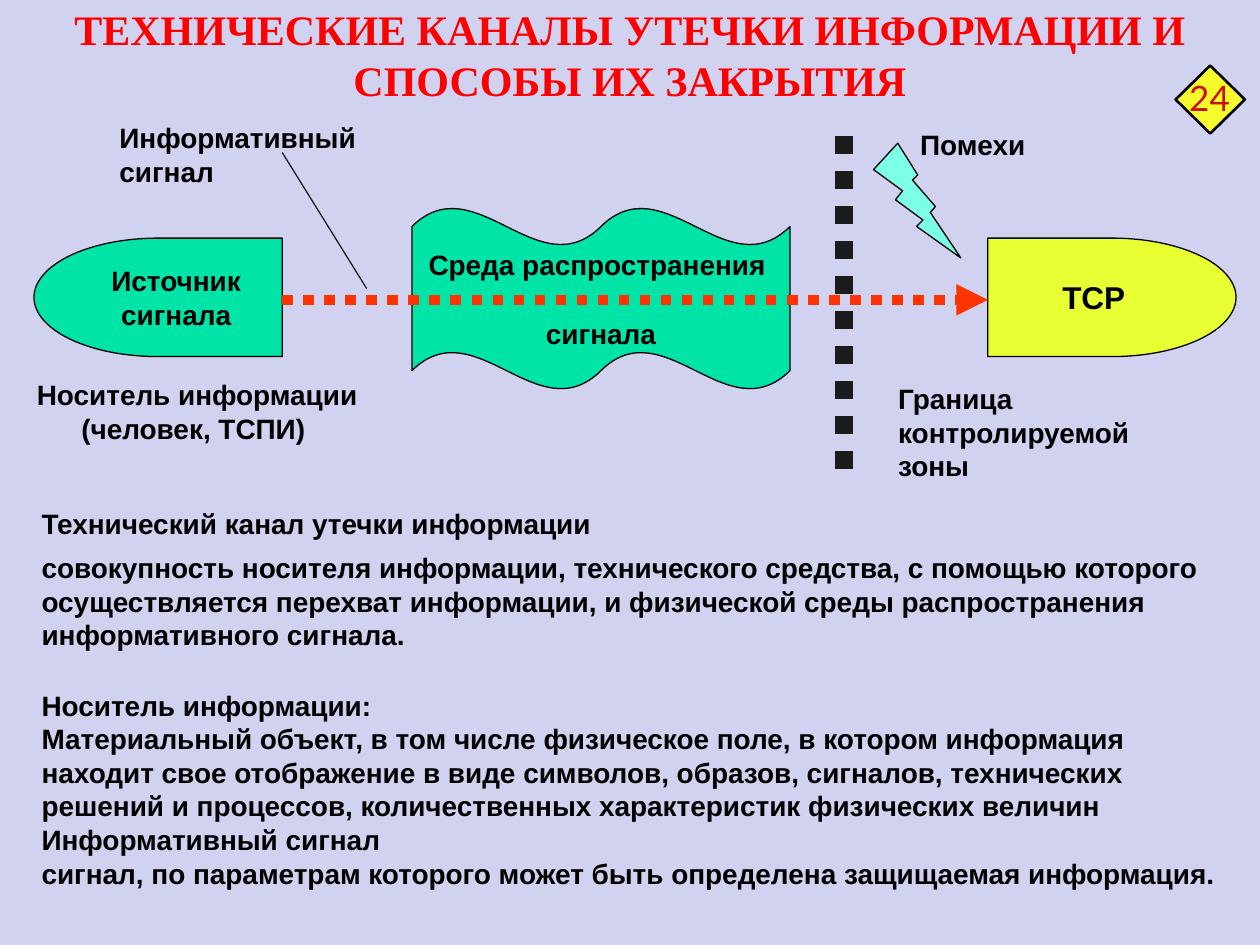
from pptx import Presentation
from pptx.dml.color import RGBColor
from pptx.enum.dml import MSO_LINE
from pptx.enum.shapes import MSO_CONNECTOR, MSO_SHAPE
from pptx.enum.text import MSO_ANCHOR, MSO_AUTO_SIZE, PP_ALIGN
from pptx.oxml.ns import qn
from pptx.util import Inches, Pt
from lxml.etree import SubElement

BLACK = RGBColor(0x00, 0x00, 0x00)
DARK = RGBColor(0x1C, 0x1C, 0x1C)
RED = RGBColor(0xFF, 0x00, 0x00)
ORANGE = RGBColor(0xFF, 0x33, 0x00)
CRIMSON = RGBColor(0xCA, 0x10, 0x02)
GREEN = RGBColor(0x00, 0xE4, 0xA8)
LIME = RGBColor(0xE7, 0xFF, 0x33)
AQUA = RGBColor(0x7D, 0xFF, 0xE6)
YELLOW = RGBColor(0xF6, 0xFB, 0x2D)
LILAC = RGBColor(0xD1, 0xD1, 0xF0)

TITLE = "ТЕХНИЧЕСКИЕ КАНАЛЫ УТЕЧКИ ИНФОРМАЦИИ И СПОСОБЫ ИХ ЗАКРЫТИЯ"
TERMS = [
    ("Технический канал утечки информации", 3, 3),
    ("совокупность носителя информации, технического средства, с помощью "
     "которого осуществляется перехват информации, и физической среды "
     "распространения информативного сигнала.", 3, 3),
    ("Носитель информации:", 18, 0),
    ("Материальный объект, в том числе физическое поле, в котором информация "
     "находит свое отображение в виде символов, образов, сигналов, технических "
     "решений и процессов, количественных характеристик физических величин", 0, 0),
    ("Информативный сигнал", 0, 0),
    ("сигнал, по параметрам которого может быть определена защищаемая "
     "информация.", 0, 0),
]


def place(item, box):
    item.left, item.top, item.width, item.height = map(Inches, box)


def style(para, size=16, color=BLACK, face="Arial", bold=True,
          align=PP_ALIGN.LEFT, before=0, after=0):
    font = para.font
    font.name, font.size, font.bold = face, Pt(size), bold
    font.color.rgb = color
    para.alignment = align
    para.space_before, para.space_after = Pt(before), Pt(after)


def label(slide, box, text, **look):
    frame = slide.shapes.add_textbox(*map(Inches, box)).text_frame
    frame.word_wrap = True
    frame.text = text
    style(frame.paragraphs[0], **look)


def shape(slide, kind, box, fill, lines=(), size=16, gap=0, width=0.75):
    item = slide.shapes.add_shape(kind, *map(Inches, box))
    item.shadow.inherit = False
    item.fill.solid()
    item.fill.fore_color.rgb = fill
    item.line.color.rgb = BLACK
    item.line.width = Pt(width)
    frame = item.text_frame
    frame.word_wrap = False
    frame.vertical_anchor = MSO_ANCHOR.MIDDLE
    frame.text = "\n".join(lines)
    for i, para in enumerate(frame.paragraphs):
        style(para, size, align=PP_ALIGN.CENTER, before=gap if i else 0)
    return item


def line(slide, start, end, color, width, dash=None, arrow=False):
    item = slide.shapes.add_connector(
        MSO_CONNECTOR.STRAIGHT, *map(Inches, (*start, *end)))
    item.line.color.rgb = color
    item.line.width = Pt(width)
    if dash:
        item.line.dash_style = dash
    if arrow:
        SubElement(item.line._get_or_add_ln(), qn("a:tailEnd"), type="triangle")
    SubElement(item._element.spPr, qn("a:effectLst"))


def title(slide, box):
    head = slide.shapes.title
    place(head, box)
    frame = head.text_frame
    frame.margin_left = frame.margin_right = 0
    frame.margin_top = frame.margin_bottom = 0
    frame.auto_size = MSO_AUTO_SIZE.NONE
    frame.vertical_anchor = MSO_ANCHOR.TOP
    frame.text = TITLE
    style(frame.paragraphs[0], 24, RED, "Times New Roman", align=PP_ALIGN.CENTER)


def terms(slide, box):
    body = slide.placeholders[1]
    place(body, box)
    frame = body.text_frame
    frame.auto_size = MSO_AUTO_SIZE.NONE
    frame.text = "\n".join(text for text, *_ in TERMS)
    for para, (_, before, after) in zip(frame.paragraphs, TERMS):
        style(para, before=before, after=after)
        props = para._p.get_or_add_pPr()
        props.set("marL", "0")
        props.set("indent", "0")
        SubElement(props, qn("a:buNone"))


def channel(slide, x, y):
    edge = x + 6.7
    line(slide, (edge, y + 0.18), (edge, y + 2.89), DARK, 10, MSO_LINE.ROUND_DOT)
    wave = shape(slide, MSO_SHAPE.DOUBLE_WAVE, (x + 3.27, y + 0.75, 3, 1.44),
                 GREEN, ["Среда распространения ", "сигнала"], gap=20)
    wave.adjustments[0] = 0.103
    wave.adjustments[1] = 0
    source = shape(slide, MSO_SHAPE.FLOWCHART_DELAY,
                   (x + 0.27, y + 0.99, 1.97, 0.94), GREEN,
                   ["Источник", "сигнала"])
    source._element.spPr.xfrm.set("flipH", "1")
    shape(slide, MSO_SHAPE.FLOWCHART_DELAY, (x + 7.84, y + 0.99, 1.97, 0.94),
          LIME, ["ТСР"], size=18)
    line(slide, (x + 2.24, y + 0.31), (x + 2.91, y + 1.39), DARK, 0.75)
    line(slide, (x + 2.24, y + 1.48), (x + 7.84, y + 1.48), ORANGE, 6,
         MSO_LINE.ROUND_DOT, arrow=True)
    bolt = shape(slide, MSO_SHAPE.LIGHTNING_BOLT,
                 (x + 6.98, y + 0.22, 0.57, 0.98), AQUA)
    bolt.rotation = 350.7
    label(slide, (x + 0.85, y + 0.01, 2.2, 0.64), "Информативный сигнал")
    label(slide, (x + 6.97, y + 0.06, 1.5, 0.37), "Помехи",
          align=PP_ALIGN.CENTER)
    label(slide, (x + 7.03, y + 2.08, 2.32, 0.91),
          "Граница контролируемой зоны")
    label(slide, (x + 0.16, y + 2.05, 2.81, 0.64),
          "Носитель информации (человек, ТСПИ) ", align=PP_ALIGN.CENTER)


def badge(slide, x, y):
    shape(slide, MSO_SHAPE.DIAMOND, (x, y, 0.55, 0.54), YELLOW, width=1.5)
    label(slide, (x + 0.01, y + 0.04, 0.53, 0.43), "24", size=20,
          color=CRIMSON, face="Lato", bold=False)


def main():
    deck = Presentation()
    deck.slide_width, deck.slide_height = Inches(10), Inches(7.5)
    slide = deck.slides.add_slide(deck.slide_layouts[1])
    slide.background.fill.solid()
    slide.background.fill.fore_color.rgb = LILAC
    title(slide, (0, 0.03, 10, 0.81))
    terms(slide, (0.23, 3.97, 9.53, 3.03))
    channel(slide, 0, 0.9)
    badge(slide, 9.33, 0.52)
    deck.save("out.pptx")


if __name__ == "__main__":
    main()
